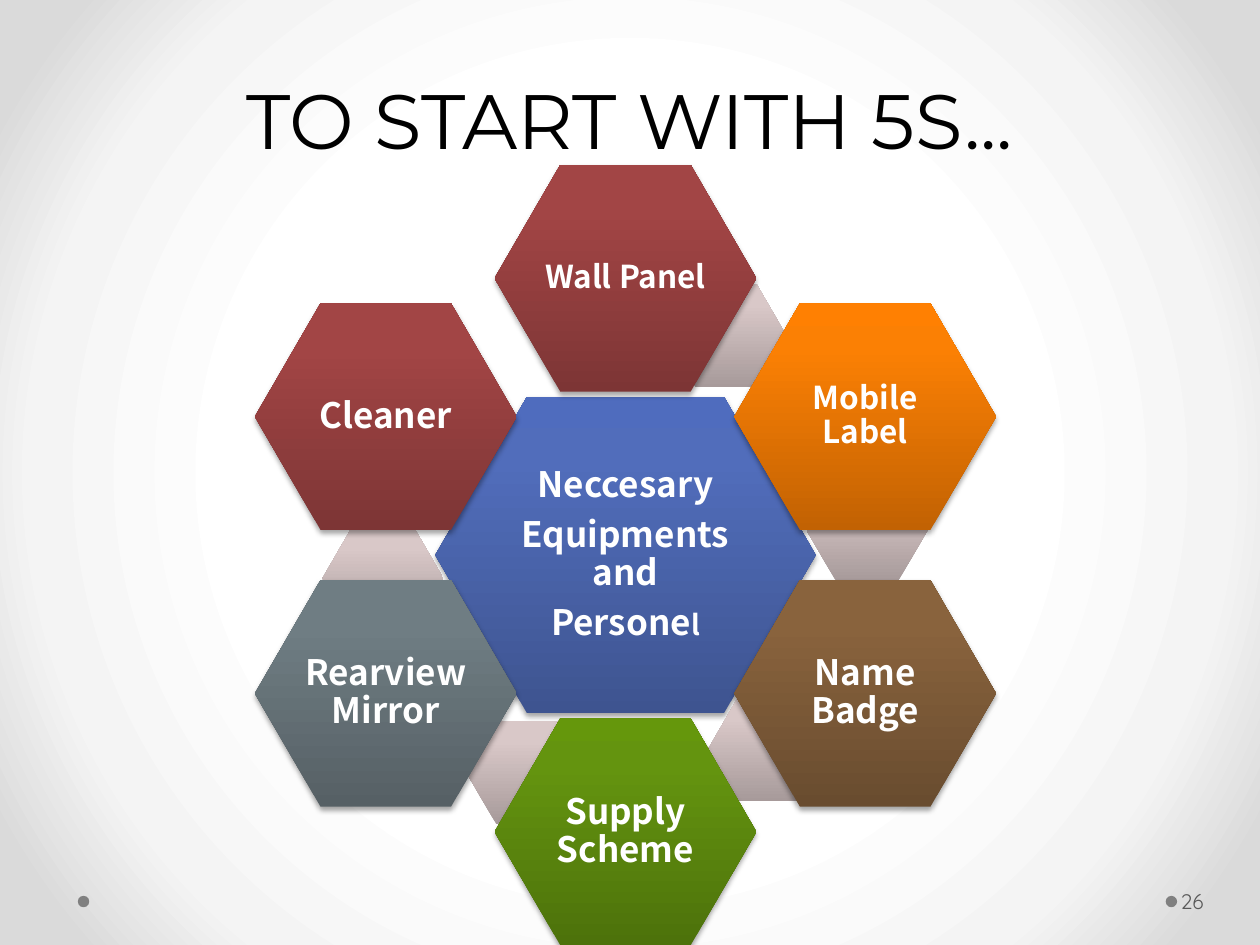
import math

from lxml import etree
from pptx import Presentation
from pptx.dml.color import RGBColor
from pptx.enum.shapes import MSO_SHAPE
from pptx.enum.text import MSO_ANCHOR, MSO_AUTO_SIZE, PP_ALIGN
from pptx.oxml.ns import qn
from pptx.util import Cm, Pt

HEXAGON, OVAL = MSO_SHAPE.HEXAGON, MSO_SHAPE.OVAL
CENTER, LEFT = PP_ALIGN.CENTER, PP_ALIGN.LEFT
MIDDLE, BOTTOM = MSO_ANCHOR.MIDDLE, MSO_ANCHOR.BOTTOM
NO_AUTOFIT = MSO_AUTO_SIZE.NONE

# Gradients run from the bottom of a shape to its top
STOPS = (0, 80, 100)
BLUE = ("3E5490", "516DBB", "4F6CBE")
RED = ("7D3535", "A24545", "A44343")
ORANGE = ("C26203", "FB8004", "FF8002")
BROWN = ("694C2F", "89633D", "8B633C")
GREEN = ("4D720B", "64940F", "65970C")
GREY = ("566065", "6F7D83", "6F7E84")
LINK = ("A79A9A", "D9C8C8", "DBC9C9")

# Honeycomb geometry in centimetres
RING_X, RING_Y, RING_RADIUS = 12.61, 11.19, 5.58
CORE_SIZE = (7.67, 6.38)
TILE_SIZE = (5.28, 4.57)
LINK_SIZE = (2.44, 2.08)

# Clockwise from the top: label, text size, colours, corner of the link behind
TILES = [
    ("Wall Panel", 18, RED, (13.41, 5.72)),
    ("Mobile Label", 18, ORANGE, (16.26, 9.65)),
    ("Name Badge", 20, BROWN, (14.27, 14.07)),
    ("Supply Scheme", 20, GREEN, (9.4, 14.53)),
    ("Rearview Mirror", 20, GREY, (6.5, 10.62)),
    ("Cleaner", 20, RED, None),
]
CORE_TEXT = [
    [("Neccesary", 20)],
    [("Equipments and", 20)],
    [("Persone", 20), ("l", 16)],
]


def color(value):
    return RGBColor.from_string(value)


def add_element(parent, tag, **attributes):
    values = {name: str(value) for name, value in attributes.items()}
    return etree.SubElement(parent, qn(tag), values)


class SlideBuilder:
    title_font = "Montserrat"
    label_font = "Noto Sans CJK SC"
    number_font = "Quicksand"

    def __init__(self, slide):
        self.slide = slide

    def gradient(self, fill, owner, positions, colors, radial=False):
        fill.gradient()
        gradient = next(owner.iter(qn("a:gradFill")))
        for child in list(gradient):
            gradient.remove(child)
        stops = add_element(gradient, "a:gsLst")
        for position, value in zip(positions, colors):
            stop = add_element(stops, "a:gs", pos=position * 1000)
            add_element(stop, "a:srgbClr", val=value)
        if radial:
            circle = add_element(gradient, "a:path", path="circle")
            add_element(circle, "a:fillToRect", l=50000, t=50000, r=50000, b=50000)
        else:
            add_element(gradient, "a:lin", ang=270 * 60000, scaled=0)

    def background(self, positions, colors):
        self.gradient(self.slide.background.fill, self.slide.element,
                      positions, colors, radial=True)

    def run(self, paragraph, text, size, font, value, bold=False):
        run = paragraph.add_run()
        run.text = text
        run.font.size = Pt(size)
        run.font.name = font
        run.font.bold = bold
        run.font.color.rgb = color(value)

    def title(self, text, left, top, width, height):
        title = self.slide.shapes.title
        title.left, title.top = Cm(left), Cm(top)
        title.width, title.height = Cm(width), Cm(height)
        frame = title.text_frame
        frame.auto_size = NO_AUTOFIT
        frame.vertical_anchor = BOTTOM
        paragraph = frame.paragraphs[0]
        paragraph.alignment = CENTER
        paragraph.line_spacing = Pt(58)
        self.run(paragraph, text, 44, self.title_font, "000000")

    def dot(self, left, top, diameter):
        dot = self.slide.shapes.add_shape(
            OVAL, Cm(left), Cm(top), Cm(diameter), Cm(diameter))
        dot.shadow.inherit = False
        dot.fill.solid()
        dot.fill.fore_color.rgb = color("808080")
        dot.line.fill.background()

    def page_number(self, text, left, top, width, height):
        box = self.slide.shapes.add_textbox(
            Cm(left), Cm(top), Cm(width), Cm(height))
        frame = box.text_frame
        frame.word_wrap = True
        frame.vertical_anchor = MIDDLE
        frame.margin_left = Cm(0.08)
        frame.margin_right = Cm(0.13)
        paragraph = frame.paragraphs[0]
        paragraph.alignment = LEFT
        self.run(paragraph, text, 12, self.number_font, "595959")

    def hexagon(self, left, top, size, colors):
        shape = self.slide.shapes.add_shape(
            HEXAGON, Cm(left), Cm(top), Cm(size[0]), Cm(size[1]))
        shape.adjustments[0] = 0.29
        shape.shadow.inherit = False
        shape.line.fill.background()
        self.gradient(shape.fill, shape.element, STOPS, colors)
        return shape

    def tile(self, center_x, center_y, size, colors, lines):
        shape = self.hexagon(center_x - size[0] / 2, center_y - size[1] / 2,
                             size, colors)
        # Soft shadow below the tile
        effects = next(shape.element.iter(qn("a:effectLst")))
        shadow = add_element(effects, "a:outerShdw", blurRad=Pt(3.1),
                             dist=Pt(1.8), dir=90 * 60000, rotWithShape=0)
        black = add_element(shadow, "a:srgbClr", val="000000")
        add_element(black, "a:alpha", val=35000)
        # Label
        frame = shape.text_frame
        frame.word_wrap = True
        frame.vertical_anchor = MIDDLE
        frame.margin_left = frame.margin_right = Cm(0.08)
        frame.margin_top = frame.margin_bottom = Cm(0.08)
        for index, runs in enumerate(lines):
            paragraph = frame.add_paragraph() if index else frame.paragraphs[0]
            paragraph.alignment = CENTER
            paragraph.line_spacing = 0.9
            paragraph.space_after = Pt(7)
            for text, size_pt in runs:
                self.run(paragraph, text, size_pt, self.label_font, "FFFFFF", True)


def main():
    presentation = Presentation()
    presentation.slide_width, presentation.slide_height = Cm(25.4), Cm(19.05)
    title_only = presentation.slide_layouts[5]
    builder = SlideBuilder(presentation.slides.add_slide(title_only))

    # Background, title and footer
    builder.background((50, 76, 92), ("FFFFFF", "F4F4F4", "DADADA"))
    builder.title("TO START WITH 5S...", 1.27, 0.53, 22.86, 2.92)
    for left in (23.5, 1.57):
        builder.dot(left, 18.06, 0.23)
    builder.page_number("26", 23.72, 17.65, 1.55, 1.02)

    # Core hexagon
    builder.tile(RING_X, RING_Y, CORE_SIZE, BLUE, CORE_TEXT)

    # Ring of tiles, each with its link behind it
    for index, (label, size, colors, link) in enumerate(TILES):
        if link:
            builder.hexagon(*link, LINK_SIZE, LINK)
        angle = math.radians(360 / len(TILES) * index)
        builder.tile(RING_X + RING_RADIUS * math.sin(angle),
                     RING_Y - RING_RADIUS * math.cos(angle),
                     TILE_SIZE, colors, [[(label, size)]])

    presentation.save("out.pptx")


if __name__ == "__main__":
    main()
